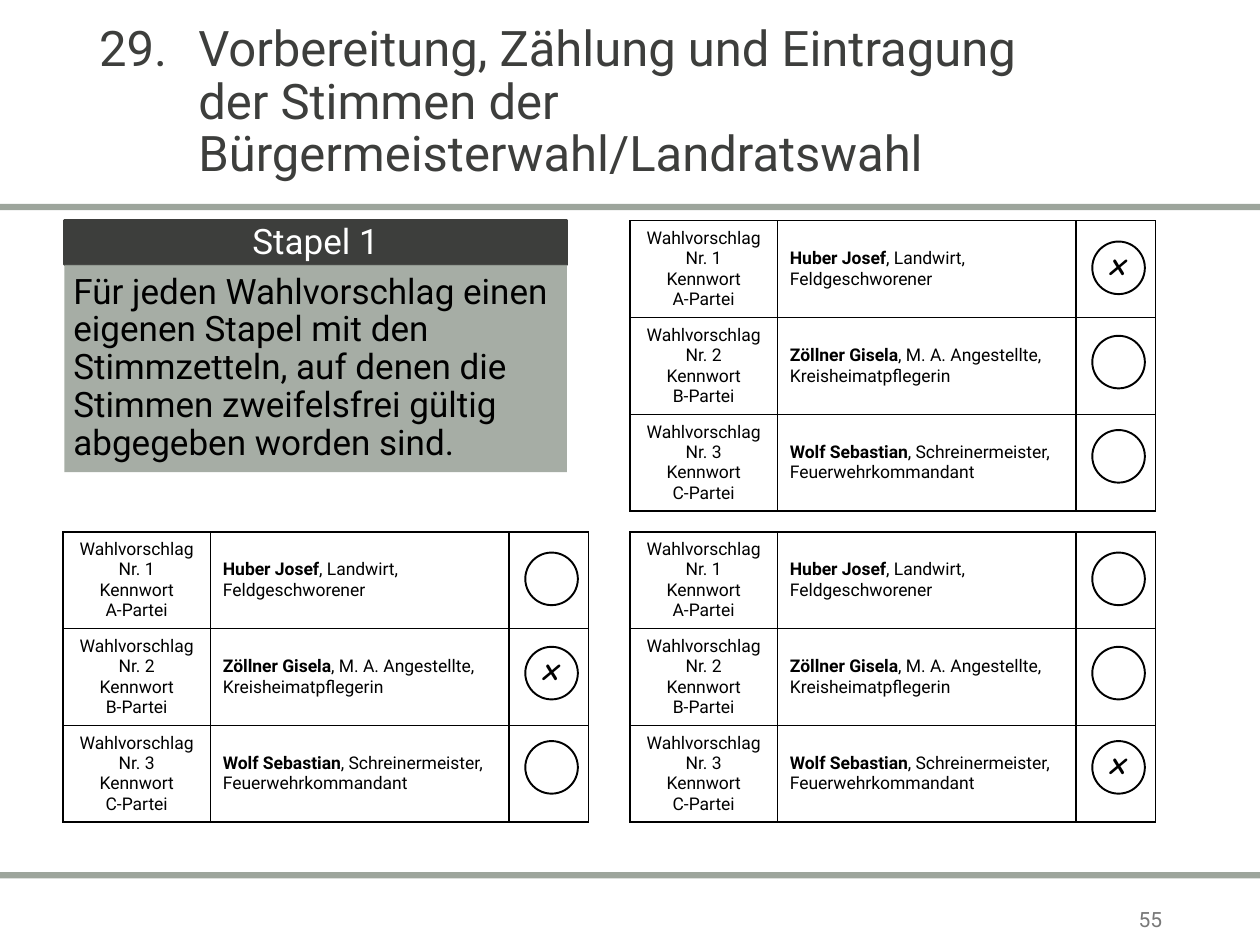
from lxml import etree
from pptx import Presentation
from pptx.dml.color import RGBColor
from pptx.enum.shapes import MSO_SHAPE
from pptx.enum.text import MSO_ANCHOR, PP_ALIGN
from pptx.oxml.ns import qn
from pptx.util import Cm, Pt

RECT, OVAL = MSO_SHAPE.RECTANGLE, MSO_SHAPE.OVAL
LEFT, CENTER, RIGHT = PP_ALIGN.LEFT, PP_ALIGN.CENTER, PP_ALIGN.RIGHT
TOP, MIDDLE = MSO_ANCHOR.TOP, MSO_ANCHOR.MIDDLE
BLACK, WHITE, DARK, SAGE, GREY = "000000", "FFFFFF", "3D3E3C", "9DA59C", "797979"


def style(item, size, color, name="Roboto"):
    """Set the font of a paragraph or run."""
    item.font.size = Pt(size)
    item.font.name = name
    item.font.color.rgb = RGBColor.from_string(color)


def add_box(shape, x, y, w, h, fill=None, line=None, width=1):
    """Add a preset shape, measured in centimetres, without shadow."""
    sp = s.shapes.add_shape(shape, Cm(x), Cm(y), Cm(w), Cm(h))
    sp.shadow.inherit = False
    if fill:
        sp.fill.solid()
        sp.fill.fore_color.rgb = RGBColor.from_string(fill)
    else:
        sp.fill.background()
    if line:
        sp.line.color.rgb = RGBColor.from_string(line)
        sp.line.width = Pt(width)
    else:
        sp.line.fill.background()
    return sp


prs = Presentation()
prs.slide_width, prs.slide_height = Cm(25.4), Cm(19.05)
s = prs.slides.add_slide(prs.slide_layouts[6])

# Rules above and below the content
for y in (4.11, 17.58):
    add_box(RECT, 0, y, 25.4, 0.13, SAGE)

# Slide number and title
number = s.shapes.add_textbox(Cm(21.39), Cm(18.21), Cm(2.29), Cm(0.64))
title = s.shapes.add_textbox(Cm(1.75), Cm(0.2), Cm(19), Cm(3.76))

# Heading and explanation of the stack
heading = add_box(RECT, 1.3, 4.45, 10.13, 0.89, DARK, DARK, 1.5)
body = add_box(RECT, 1.3, 5.34, 10.13, 4.18, SAGE)
alpha = etree.SubElement(body.fill._xPr.find(qn("a:solidFill"))[0], qn("a:alpha"))
alpha.set("val", "90000")

texts = [
    (number, "55", 12, GREY, RIGHT, MIDDLE, 1),
    (title, "29.\tVorbereitung, Zählung und Eintragung der Stimmen der "
     "Bürgermeisterwahl/Landratswahl", 28, DARK, LEFT, MIDDLE, 0.9),
    (heading, "Stapel 1", 20, WHITE, CENTER, MIDDLE, 0.9),
    (body, "Für jeden Wahlvorschlag einen eigenen Stapel mit den Stimmzetteln, "
     "auf denen die Stimmen zweifelsfrei gültig abgegeben worden sind.",
     20, BLACK, LEFT, TOP, 0.9),
]
for sp, text, size, color, align, anchor, spacing in texts:
    tf = sp.text_frame
    tf.text = text
    tf.word_wrap = True
    tf.vertical_anchor = anchor
    p = tf.paragraphs[0]
    p.alignment = align
    p.line_spacing = spacing
    style(p.runs[0], size, color)

pPr = title.text_frame.paragraphs[0]._p.get_or_add_pPr()
pPr.set("marL", str(Cm(2)))
pPr.set("indent", str(-Cm(2)))
body.text_frame.margin_left = body.text_frame.margin_top = Cm(0.18)

# Ballot papers: left, top, index of the marked candidate
ballots = [(12.7, 4.45, 0), (12.7, 10.72, 2), (1.27, 10.72, 1)]
candidates = [
    ("A", "Huber Josef", ", Landwirt, Feldgeschworener"),
    ("B", "Zöllner Gisela", ", M. A. Angestellte, Kreisheimatpflegerin"),
    ("C", "Wolf Sebastian", ", Schreinermeister, Feuerwehrkommandant"),
]
col_widths = (2.97, 6.02, 1.6)
row_height = 1.9
circle_size = 1.06

for x, y, marked in ballots:
    table = s.shapes.add_table(3, 3, Cm(x), Cm(y), Cm(sum(col_widths)),
                               Cm(3 * row_height)).table
    table.first_row = table.horz_banding = False
    for column, width in zip(table.columns, col_widths):
        column.width = Cm(width)

    for i, (party, name, job) in enumerate(candidates):
        table.rows[i].height = Cm(row_height)
        proposal, person = table.cell(i, 0), table.cell(i, 1)
        proposal.text_frame.text = f"Wahlvorschlag\nNr. {i + 1}\nKennwort\n{party}-Partei"
        for p in proposal.text_frame.paragraphs:
            p.alignment = CENTER
            style(p.runs[0], 10, BLACK)
        for text, bold in ((name, True), (job, False)):
            r = person.text_frame.paragraphs[0].add_run()
            r.text = text
            style(r, 10, BLACK)
            r.font.bold = bold

        circle = add_box(OVAL, x + 9.32, y + 0.42 + i * row_height,
                         circle_size, circle_size, line=BLACK, width=1.1)
        if i == marked:
            tf = circle.text_frame
            tf.text = "x"
            tf.margin_left = tf.margin_right = tf.margin_top = 0
            tf.margin_bottom = Cm(0.2)
            tf.vertical_anchor = MIDDLE
            p = tf.paragraphs[0]
            p.alignment = CENTER
            r = p.runs[0]
            style(r, 18, BLACK, "Comic Neue")
            r.font.bold = r.font.italic = True

    for cell in table.iter_cells():
        cell.vertical_anchor = MIDDLE
        tcPr = cell._tc.get_or_add_tcPr()
        for side in ("a:lnL", "a:lnR", "a:lnT", "a:lnB"):
            ln = etree.SubElement(tcPr, qn(side), w=str(Pt(1)))
            solid = etree.SubElement(ln, qn("a:solidFill"))
            etree.SubElement(solid, qn("a:srgbClr"), val=BLACK)
        cell.fill.background()

prs.save("out.pptx")
